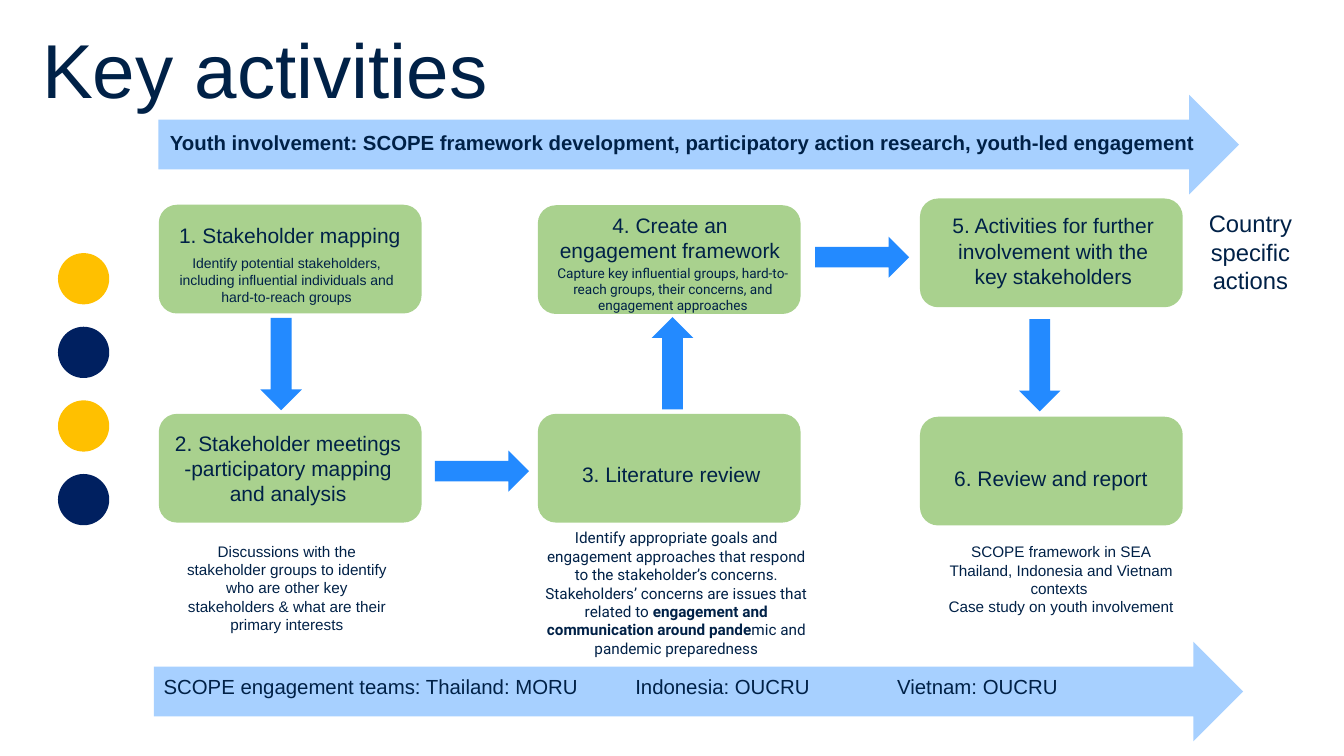
from dataclasses import dataclass

from pptx import Presentation
from pptx.dml.color import RGBColor
from pptx.enum.shapes import MSO_SHAPE
from pptx.enum.text import MSO_ANCHOR, PP_ALIGN
from pptx.oxml.ns import qn
from pptx.util import Cm, Pt
from lxml import etree

ROUNDED, OVAL = MSO_SHAPE.ROUNDED_RECTANGLE, MSO_SHAPE.OVAL
DOWN, UP, RIGHT = MSO_SHAPE.DOWN_ARROW, MSO_SHAPE.UP_ARROW, MSO_SHAPE.RIGHT_ARROW
TOP, MIDDLE = MSO_ANCHOR.TOP, MSO_ANCHOR.MIDDLE
LEFT, CENTER = PP_ALIGN.LEFT, PP_ALIGN.CENTER


@dataclass(frozen=True)
class Theme:
    ink: str = "002147"
    card: str = "A9D18E"
    arrow: str = "238AFF"
    band: str = "A7D0FF"
    gold: str = "FFC000"
    navy: str = "002060"
    font: str = "Arial"
    alt_font: str = "Roboto"
    title: float = 90
    side: float = 28
    heading: float = 24.7
    band_text: float = 24
    note: float = 18
    detail: float = 16.5
    alt_detail: float = 16


THEME = Theme()
CARD_W, CARD_H = 10.92, 4.52


def add_filled(slide, kind, box, color):
    shape = slide.shapes.add_shape(kind, *map(Cm, box))
    shape.shadow.inherit = False
    shape.fill.solid()
    shape.fill.fore_color.rgb = RGBColor.from_string(color)
    shape.line.fill.background()


def add_text(slide, box, paragraphs, size, font=THEME.font, align=CENTER,
             anchor=TOP, wrap=True, tabs=()):
    frame = slide.shapes.add_textbox(*map(Cm, box)).text_frame
    frame.word_wrap = wrap
    frame.vertical_anchor = anchor
    for index, runs in enumerate(paragraphs):
        paragraph = frame.paragraphs[0] if index == 0 else frame.add_paragraph()
        paragraph.alignment = align
        if tabs:
            stops = etree.SubElement(paragraph._p.get_or_add_pPr(), qn("a:tabLst"))
            for position in tabs:
                etree.SubElement(stops, qn("a:tab"), pos=str(Cm(position)), algn="l")
        for words, bold in runs:
            run = paragraph.add_run()
            run.text = words
            run.font.name = font
            run.font.size = Pt(size)
            run.font.bold = bold
            run.font.color.rgb = RGBColor.from_string(THEME.ink)


def plain(*lines):
    return [[(line, False)] for line in lines]


def within(origin, part):
    left, top = origin
    dx, dy, width, height = part
    return left + dx, top + dy, width, height


def add_activity(slide, origin, heading, heading_part, detail=None, detail_part=None,
                 **detail_style):
    add_filled(slide, ROUNDED, (*origin, CARD_W, CARD_H), THEME.card)
    add_text(slide, within(origin, heading_part), plain(heading), THEME.heading,
             anchor=MIDDLE)
    if detail:
        add_text(slide, within(origin, detail_part), detail, **detail_style)


def add_band(slide, box, text_part, words, bold=False, tabs=()):
    add_filled(slide, RIGHT, box, THEME.band)
    add_text(slide, within(box[:2], text_part), [[(words, bold)]], THEME.band_text,
             align=LEFT, tabs=tabs)


def add_dots(slide, left, top, diameter, step):
    for index, color in enumerate((THEME.gold, THEME.navy) * 2):
        add_filled(slide, OVAL, (left, top + index * step, diameter, diameter), color)


def add_activities(slide, left, top):
    first, second, third = left, left + 15.75, left + 31.63
    lower = top + 8.69
    add_activity(
        slide, (first, top), "1. Stakeholder mapping", (0.43, 0.18, 10.03, 2.13),
        plain("Identify potential stakeholders, including influential individuals "
              "and hard-to-reach groups"),
        (0.61, 1.96, 9.4, 2.36), size=THEME.detail)
    add_activity(
        slide, (first, lower),
        "2. Stakeholder meetings -participatory mapping and analysis",
        (0.36, 0.51, 10.03, 3.48),
        plain("Discussions with the stakeholder groups to identify who are other key "
              "stakeholders & what are their primary interests"),
        (0.71, 5.18, 9.22, 4.09), size=THEME.note, anchor=MIDDLE)
    add_activity(
        slide, (second, lower), "3. Literature review", (0.53, 0.76, 10.03, 3.48),
        [[("Identify appropriate goals and engagement approaches that respond to the "
           "stakeholder’s concerns. Stakeholders’ concerns are issues that related to ",
           False),
          ("engagement and communication around pande", True),
          ("mic and pandemic preparedness", False)]],
        (0, 4.65, 11.51, 5.64), size=THEME.note, font=THEME.alt_font)
    add_activity(
        slide, (second, top + 0.02), "4. Create an engagement framework",
        (0.48, 0.41, 10.03, 1.88),
        plain("Capture key influential groups, hard-to-reach groups, their concerns, "
              "and engagement approaches"),
        (0.28, 2.34, 10.67, 2.31), size=THEME.alt_detail, font=THEME.alt_font)
    add_activity(
        slide, (third, top - 0.26),
        "5. Activities for further involvement with the key stakeholders",
        (0.56, 0.38, 9.96, 3.58))
    add_activity(
        slide, (third, lower + 0.12), "6. Review and report", (0.43, 1.09, 10.03, 2.95),
        plain("SCOPE framework in SEA", "Thailand, Indonesia and Vietnam contexts ",
              "Case study on youth involvement"),
        (0, 5.46, 11.73, 2.59), size=THEME.note, anchor=MIDDLE)

    for kind, part in (
        (DOWN, (4.22, 4.7, 1.73, 3.84)),
        (RIGHT, (11.47, 10.22, 3.91, 1.7)),
        (UP, (20.48, 4.67, 1.73, 3.84)),
        (RIGHT, (27.27, 1.33, 3.91, 1.7)),
        (DOWN, (35.74, 4.75, 1.73, 3.84)),
    ):
        add_filled(slide, kind, within((left, top), part), THEME.arrow)


def main():
    deck = Presentation()
    deck.slide_width, deck.slide_height = Cm(55.85), Cm(31.42)
    slide = deck.slides.add_slide(deck.slide_layouts[6])

    add_activities(slide, 6.6, 8.51)
    add_text(slide, (49.94, 8.08, 4.04, 4.78), plain("Country specific actions"),
             THEME.side, anchor=MIDDLE)
    add_band(slide, (6.58, 3.94, 44.91, 4.14), (0.23, 1.34, 44.91, 1.27),
             "Youth involvement: SCOPE framework development, participatory action "
             "research, youth-led engagement", bold=True)
    add_band(slide, (6.4, 26.67, 45.26, 4.14), (0.15, 1.22, 40.21, 1.27),
             "SCOPE engagement teams: Thailand: MORU\tIndonesia: OUCRU\tVietnam: OUCRU",
             tabs=(19.6, 30.48))
    add_dots(slide, 2.41, 10.52, 2.13, 3.06)
    add_text(slide, (1.5, 0.81, 19.2, 4.11), plain("Key activities"), THEME.title,
             align=LEFT, wrap=False)

    deck.save("out.pptx")


if __name__ == "__main__":
    main()
